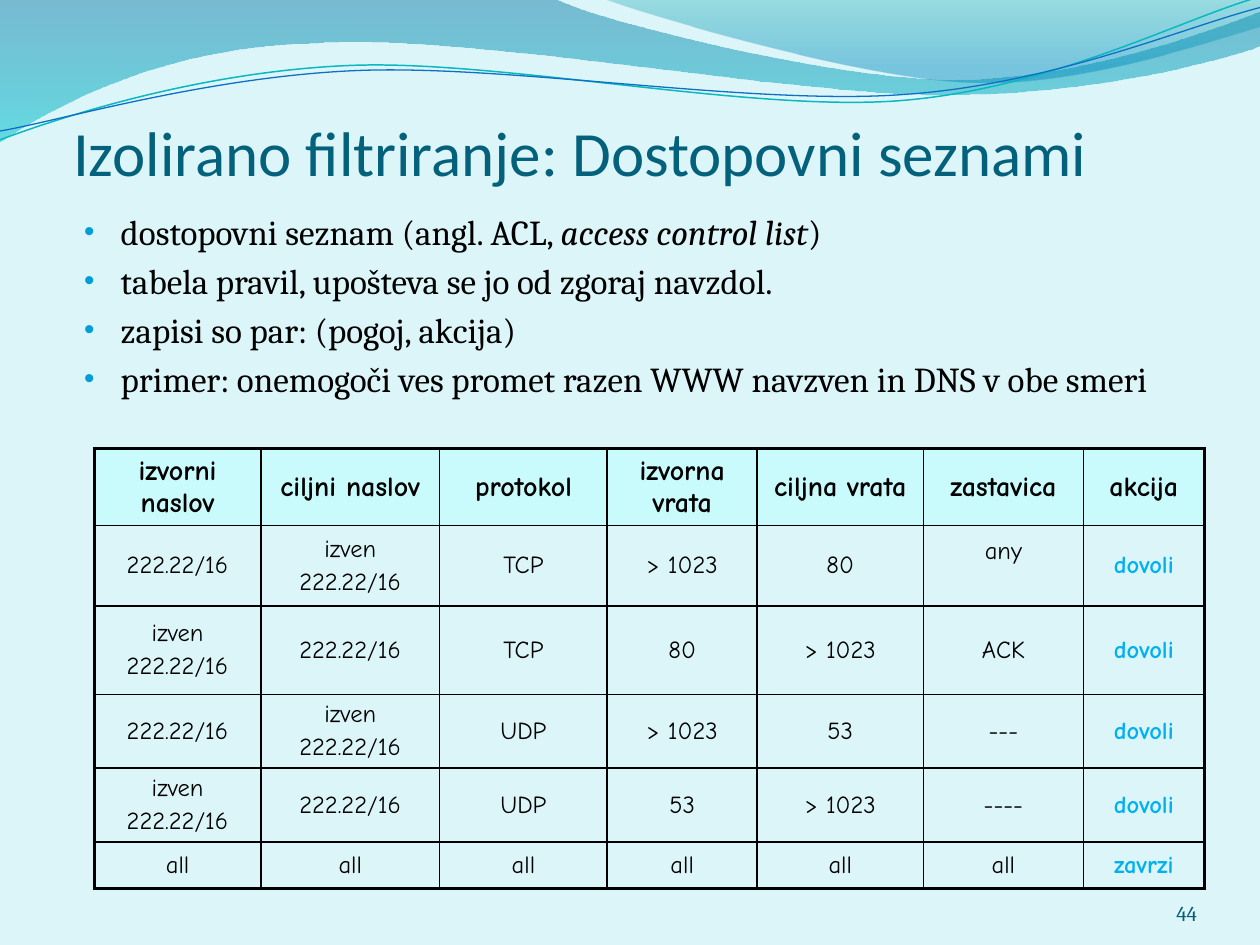
from math import cos, radians, sin

from lxml.etree import SubElement
from pptx import Presentation
from pptx.dml.color import RGBColor
from pptx.enum.text import MSO_ANCHOR, MSO_AUTO_SIZE, PP_ALIGN
from pptx.oxml.ns import qn
from pptx.util import Inches, Pt

BLACK = RGBColor(0x00, 0x00, 0x00)
BACKGROUND = RGBColor(0xDB, 0xF5, 0xF9)
TITLE_BLUE = RGBColor(0x04, 0x61, 0x7B)
NUMBER_BLUE = RGBColor(0x04, 0x5D, 0x75)
BULLET_BLUE = RGBColor(0x00, 0x9D, 0xD9)
ACTION_BLUE = RGBColor(0x00, 0xB0, 0xF0)
HEADER_FILL = RGBColor(0xC9, 0xFA, 0xFC)
WAVE_BLUE = RGBColor(0x00, 0x74, 0xA1)
WAVE_CYAN = RGBColor(0x00, 0xC6, 0xCF)
SWOOSH_TEAL = RGBColor(0x00, 0xA1, 0xA9)
SWOOSH_BLUE = RGBColor(0x00, 0x8B, 0xBF)
LINE_TEAL = RGBColor(0x0A, 0xB8, 0xBF)
LINE_BLUE = RGBColor(0x0F, 0x6F, 0xC6)

# Content
TITLE = "Izolirano filtriranje: Dostopovni seznami"
BULLETS = [  # runs of (text, italic)
    [("dostopovni seznam (angl. ACL, ", False), ("access control list", True), (")", False)],
    [("tabela pravil, upošteva se jo od zgoraj navzdol.", False)],
    [("zapisi so par: (pogoj, akcija)", False)],
    [("primer: onemogoči ves promet razen WWW navzven in DNS v obe smeri", False)],
]
INSIDE, OUTSIDE = "222.22/16", "izven\n222.22/16"
RULES = [
    ["izvorni naslov", "ciljni naslov", "protokol", "izvorna vrata", "ciljna vrata",
     "zastavica", "akcija"],
    [INSIDE, OUTSIDE, "TCP", "> 1023", "80", "any", "dovoli"],
    [OUTSIDE, INSIDE, "TCP", "80", "> 1023", "ACK", "dovoli"],
    [INSIDE, OUTSIDE, "UDP", "> 1023", "53", "---", "dovoli"],
    [OUTSIDE, INSIDE, "UDP", "53", "> 1023", "----", "dovoli"],
    ["all"] * 6 + ["zavrzi"],
]
COL_WIDTHS = [1.32, 1.42, 1.33, 1.19, 1.32, 1.27, 0.96]
ROW_HEIGHTS = [0.52, 0.64, 0.70, 0.53, 0.52, 0.37]

# Wave outlines in inches: a pair is a straight step, a six-tuple a Bézier curve
WAVE = [(0, 0), (4.4, -0.01), (4.76, 0.17, 6.64, 0.63, 7.58, 0.63),
        (8.53, 0.63, 9.58, 0.26, 10, 0.09), (10.01, 0.36),
        (9.83, 0.44, 8.7, 0.76, 7.46, 0.75), (6.22, 0.75, 3.82, 0.28, 2.57, 0.34),
        (1.29, 0.36, 0.46, 0.83, -0.01, 1.13)]
SWOOSH = [(4.79, -0.01), (5.09, 0.11, 6.82, 0.62, 7.69, 0.65),
          (8.56, 0.69, 9.61, 0.32, 10, 0.21), (10, 0)]
TEAL_CURVE = [(0, 1.11), (0.48, 0.93, 1.58, 0.57, 2.77, 0.52),
              (3.95, 0.47, 5.93, 0.89, 7.13, 0.8), (8.33, 0.71, 9.38, 0.15, 9.98, -0.02)]
BLUE_CURVE = [(0, 1.04), (0.47, 0.96, 1.64, 0.61, 2.83, 0.56),
              (4.03, 0.51, 5.97, 0.84, 7.17, 0.75), (8.36, 0.67, 9.41, 0.21, 10, 0.06)]
CURVE_TILT = -2.7
CURVE_CENTER = (4.99, 0.58)


def level(step):
    """Turn the points of a step back by the tilt of the curves."""
    a, (cx, cy) = radians(-CURVE_TILT), CURVE_CENTER
    turned = []
    for x, y in zip(step[::2], step[1::2]):
        turned += [cx + (x - cx) * cos(a) - (y - cy) * sin(a),
                   cy + (x - cx) * sin(a) + (y - cy) * cos(a)]
    return tuple(turned)


def add_outline(s, outline, close):
    ends = [(Inches(step[-2]), Inches(step[-1])) for step in outline]
    builder = s.shapes.build_freeform(*ends[0])
    builder.add_line_segments(ends[1:], close=close)
    sp = builder.convert_to_shape()
    sp.shadow.inherit = False
    # Bend the steps that have control points
    lines = list(sp._element.spPr.iter(qn("a:lnTo")))
    for line, step in zip(lines, outline[1:]):
        if len(step) == 6:
            curve = line.makeelement(qn("a:cubicBezTo"), {})
            for x, y in zip(step[::2], step[1::2]):
                SubElement(curve, qn("a:pt"), x=str(Inches(x) - sp.left),
                           y=str(Inches(y) - sp.top))
            line.getparent().replace(line, curve)
    return sp


def add_wave(s, outline, stops):
    sp = add_outline(s, outline, True)
    sp.line.fill.background()
    sp.fill.gradient()
    sp.fill.gradient_angle = 270
    for stop, (position, color, _) in zip(sp.fill.gradient_stops, stops):
        stop.position = position
        stop.color.rgb = color
    for clr, (_, _, opacity) in zip(sp._element.spPr.iter(qn("a:srgbClr")), stops):
        SubElement(clr, qn("a:alpha"), val=str(opacity * 1000))


def add_curve(s, outline, color, width):
    sp = add_outline(s, [level(step) for step in outline], False)
    sp.rotation = CURVE_TILT
    sp.fill.background()
    sp.line.color.rgb = color
    sp.line.width = Pt(width)


def add_run(p, text, font, size, color, bold=False, italic=False):
    r = p.add_run()
    r.text = text
    r.font.name, r.font.size = font, Pt(size)
    r.font.bold, r.font.italic = bold, italic
    r.font.color.rgb = color


def add_bullet(p):
    pPr = p._p.get_or_add_pPr()
    pPr.set("marL", str(Inches(0.29)))
    pPr.set("indent", str(-Inches(0.29)))
    SubElement(SubElement(pPr, qn("a:buClr")), qn("a:srgbClr"), val=str(BULLET_BLUE))
    SubElement(pPr, qn("a:buSzPct"), val="85000")
    SubElement(pPr, qn("a:buFont"), typeface="Arial")
    SubElement(pPr, qn("a:buChar"), char="•")


def set_borders(cell, widths):
    tcPr = cell._tc.get_or_add_tcPr()
    for i, (side, width) in enumerate(widths.items()):
        ln = tcPr.makeelement(qn("a:" + side), {"w": str(Pt(width))})
        SubElement(SubElement(ln, qn("a:solidFill")), qn("a:srgbClr"), val=str(BLACK))
        tcPr.insert(i, ln)


def add_rules_table(s):
    n_rows, n_cols = len(RULES), len(COL_WIDTHS)
    table = s.shapes.add_table(n_rows, n_cols, Inches(0.75), Inches(3.56),
                               Inches(sum(COL_WIDTHS)), Inches(sum(ROW_HEIGHTS))).table
    for col, width in zip(table.columns, COL_WIDTHS):
        col.width = Inches(width)
    for row, height in zip(table.rows, ROW_HEIGHTS):
        row.height = Inches(height)
    for i, values in enumerate(RULES):
        for j, text in enumerate(values):
            cell = table.cell(i, j)
            header, action = i == 0, j == n_cols - 1
            cell.vertical_anchor = MSO_ANCHOR.MIDDLE
            if header:
                cell.fill.solid()
                cell.fill.fore_color.rgb = HEADER_FILL
            else:
                cell.fill.background()
            if text == "any":  # sits above the middle of its row
                cell.margin_bottom = Inches(0.27)
            size = 16 if header else 14
            color = ACTION_BLUE if action and not header else BLACK
            tf = cell.text_frame
            for k, line in enumerate(text.split("\n")):
                p = tf.add_paragraph() if k else tf.paragraphs[0]
                p.alignment = PP_ALIGN.CENTER
                p.space_before = Pt(0.2 * size)
                add_run(p, line, "Comic Neue", size, color, bold=header or action)
            set_borders(cell, {"lnL": 2.25 if j == 0 else 1, "lnR": 2.25 if action else 1,
                               "lnT": 2.25 if header else 1,
                               "lnB": 2.25 if i == n_rows - 1 else 1})


def main():
    prs = Presentation()
    prs.slide_width, prs.slide_height = Inches(10), Inches(7.5)
    s = prs.slides.add_slide(prs.slide_layouts[5])
    s.background.fill.solid()
    s.background.fill.fore_color.rgb = BACKGROUND

    # Wave decoration
    add_wave(s, WAVE, [(0, WAVE_BLUE, 45), (1, WAVE_CYAN, 55)])
    add_wave(s, SWOOSH, [(0, SWOOSH_TEAL, 30), (0.8, SWOOSH_BLUE, 45)])
    add_curve(s, TEAL_CURVE, LINE_TEAL, 0.85)
    add_curve(s, BLUE_CURVE, LINE_BLUE, 0.75)

    add_rules_table(s)

    # Title
    title = s.shapes.title
    title.left, title.top = Inches(0.58), Inches(0.25)
    title.width, title.height = Inches(8.83), Inches(1.25)
    tf = title.text_frame
    tf.auto_size = MSO_AUTO_SIZE.NONE
    tf.vertical_anchor = MSO_ANCHOR.BOTTOM
    tf.margin_left = tf.margin_right = tf.margin_bottom = 0
    tf.margin_top = Inches(0.05)
    tf.paragraphs[0].alignment = PP_ALIGN.LEFT
    add_run(tf.paragraphs[0], TITLE, "Calibri", 36, TITLE_BLUE)

    # Bullets
    tf = s.shapes.add_textbox(Inches(0.57), Inches(1.62), Inches(9.43), Inches(1.11)).text_frame
    tf.word_wrap = True
    for i, runs in enumerate(BULLETS):
        p = tf.add_paragraph() if i else tf.paragraphs[0]
        p.space_before = Pt(4)
        add_bullet(p)
        for text, italic in runs:
            add_run(p, text, "Cambria", 20, BLACK, italic=italic)

    # Slide number
    tf = s.shapes.add_textbox(Inches(8.67), Inches(6.95), Inches(0.83), Inches(0.4)).text_frame
    tf.word_wrap = True
    tf.vertical_anchor = MSO_ANCHOR.BOTTOM
    tf.margin_left = tf.margin_right = tf.margin_top = tf.margin_bottom = 0
    tf.paragraphs[0].alignment = PP_ALIGN.RIGHT
    add_run(tf.paragraphs[0], "44", "Cambria", 12, NUMBER_BLUE)

    prs.save("out.pptx")


if __name__ == "__main__":
    main()
